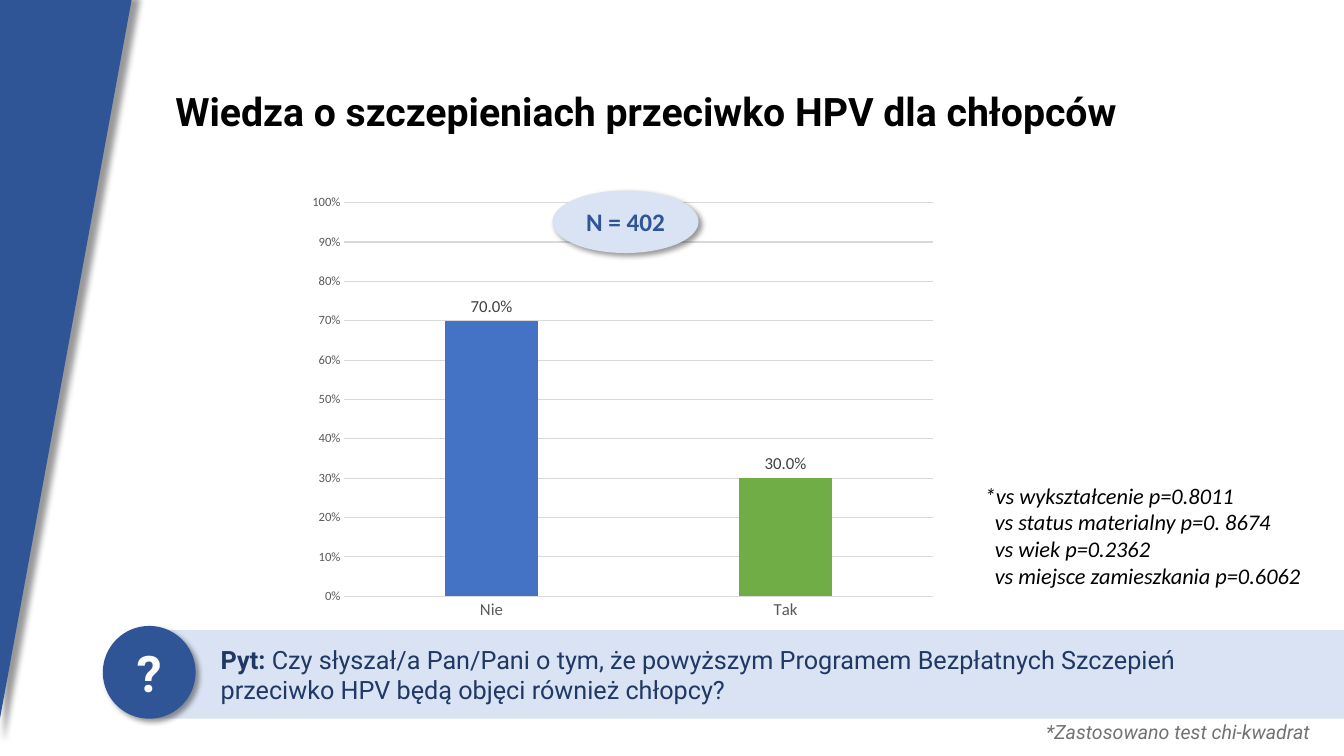
from dataclasses import dataclass

from lxml import etree
from pptx import Presentation, util as u
from pptx.chart import data as chart_data
from pptx.dml.color import RGBColor
from pptx.enum import chart as charts, shapes, text
from pptx.oxml import ns

# Grid of 160 columns by 90 rows of square cells
COLUMNS, ROWS = 160, 90
SLIDE_WIDTH, SLIDE_HEIGHT = u.Inches(13.333), u.Inches(7.5)
CELL = SLIDE_HEIGHT / ROWS

BLACK = RGBColor(0x00, 0x00, 0x00)
WHITE = RGBColor(0xFF, 0xFF, 0xFF)
NAVY = RGBColor(0x20, 0x38, 0x64)
DEEP_BLUE = RGBColor(0x2F, 0x55, 0x97)
BAR_BLUE = RGBColor(0x44, 0x72, 0xC4)
BAR_GREEN = RGBColor(0x70, 0xAD, 0x47)
PALE_BLUE = RGBColor(0xDA, 0xE3, 0xF3)
GRID_GREY = RGBColor(0xD9, 0xD9, 0xD9)
AXIS_GREY = RGBColor(0x59, 0x59, 0x59)
LABEL_GREY = RGBColor(0x40, 0x40, 0x40)
NOTE_GREY = RGBColor(0x76, 0x71, 0x71)


@dataclass
class Box:
    left: float
    top: float
    width: float
    height: float

    def inner(self, left, top, width, height):
        return Box(self.left + left, self.top + top, width, height)

    def emu(self):
        return [round(n * CELL) for n in (self.left, self.top, self.width, self.height)]


# Shared helpers
def set_font(font, size, color, name="Calibri", bold=False, italic=False):
    font.size, font.name = u.Pt(size), name
    font.bold, font.italic = bold, italic
    font.color.rgb = color


def add_run(paragraph, words, *style, **options):
    run = paragraph.add_run()
    run.text = words
    set_font(run.font, *style, **options)


def paint(shape, color, shadow_distance=None):
    shape.fill.solid()
    shape.fill.fore_color.rgb = color
    shape.line.fill.background()
    shape.shadow.inherit = False
    if shadow_distance:
        effects = shape.fill._xPr.find(ns.qn("a:effectLst"))
        shadow = etree.SubElement(
            effects, ns.qn("a:outerShdw"), blurRad=str(u.Pt(4)),
            dist=str(u.Pt(shadow_distance)), dir=str(45 * 60000),
            algn="tl", rotWithShape="0")
        black = etree.SubElement(shadow, ns.qn("a:srgbClr"), val=str(BLACK))
        etree.SubElement(black, ns.qn("a:alpha"), val="40000")


def add_panel(slide, kind, box, color, shadow_distance=None):
    panel = slide.shapes.add_shape(kind, *box.emu())
    paint(panel, color, shadow_distance)
    panel.text_frame.word_wrap = True
    panel.text_frame.vertical_anchor = text.MSO_ANCHOR.MIDDLE
    return panel


def add_oval(slide, box, words, *style):
    oval = add_panel(slide, shapes.MSO_SHAPE.OVAL, box, PALE_BLUE, 3)
    caption = oval.text_frame.paragraphs[0]
    caption.alignment = text.PP_ALIGN.CENTER
    add_run(caption, words, *style, bold=True)
    return oval


def add_textbox(slide, box, wrap=True, grow=True):
    frame = slide.shapes.add_textbox(*box.emu()).text_frame
    frame.word_wrap = wrap
    if grow:
        frame.auto_size = text.MSO_AUTO_SIZE.SHAPE_TO_FIT_TEXT
    return frame


# Regions of the slide
def draw_sidebar(slide, box):
    left, top, width, height = box.emu()
    outline = slide.shapes.build_freeform(left + width, top)
    outline.add_line_segments([(left, top), (left, top + height)], close=True)
    paint(outline.convert_to_shape(), DEEP_BLUE, 6)


def draw_title(slide, box):
    frame = add_textbox(slide, box, grow=False)
    frame.vertical_anchor = text.MSO_ANCHOR.MIDDLE
    heading = frame.paragraphs[0]
    heading.line_spacing = 0.9
    add_run(heading, "Wiedza o szczepieniach przeciwko HPV dla chłopców",
            28, BLACK, "Roboto", bold=True)


def draw_answers(slide, box):
    answers = chart_data.CategoryChartData()
    answers.categories = ["Nie", "Tak"]
    answers.add_series("Series 1", [0.7, 0.3])
    chart = slide.shapes.add_chart(
        charts.XL_CHART_TYPE.COLUMN_CLUSTERED, *box.emu(), answers).chart
    chart.has_legend = chart.has_title = False
    set_font(chart.font, 10, BLACK)

    # Axes
    for axis, size in ((chart.category_axis, 12), (chart.value_axis, 9)):
        axis.major_tick_mark = axis.minor_tick_mark = charts.XL_TICK_MARK.NONE
        set_font(axis.tick_labels.font, size, AXIS_GREY)
    percent = chart.value_axis
    percent.minimum_scale, percent.maximum_scale, percent.major_unit = 0, 1, 0.1
    percent.tick_labels.number_format = "0%"
    percent.tick_labels.number_format_is_linked = False
    percent.format.line.fill.background()
    percent.has_major_gridlines = True
    for rule in (percent.major_gridlines, chart.category_axis):
        rule.format.line.color.rgb = GRID_GREY
        rule.format.line.width = u.Pt(0.75)

    # Columns and their labels
    columns = chart.plots[0]
    columns.gap_width, columns.overlap = 219, -27
    columns.vary_by_categories = False
    share = columns.series[0]
    share.invert_if_negative = False
    for bar, color in ((share, BAR_BLUE), (share.points[1], BAR_GREEN)):
        bar.format.fill.solid()
        bar.format.fill.fore_color.rgb = color
    labels = share.data_labels
    labels.show_value = True
    labels.position = charts.XL_LABEL_POSITION.OUTSIDE_END
    labels.number_format, labels.number_format_is_linked = "0.0%", False
    set_font(labels.font, 12, LABEL_GREY)


def draw_sample_size(slide, box):
    add_oval(slide, box, "N = 402", 18, DEEP_BLUE)


def draw_question(slide, box):
    circle = box.height
    band = box.inner(circle / 2, 0.48, box.width - circle / 2, circle - 0.48)
    bar = add_panel(slide, shapes.MSO_SHAPE.RECTANGLE, band, PALE_BLUE)
    bar.text_frame.margin_left = round(8.52 * CELL)
    question = bar.text_frame.paragraphs[0]
    question.alignment = text.PP_ALIGN.LEFT
    add_run(question, "Pyt: ", 18, NAVY, "Roboto", bold=True)
    add_run(question, "Czy słyszał/a Pan/Pani o tym, że powyższym Programem "
            "Bezpłatnych Szczepień", 18, NAVY, "Roboto")
    question.add_line_break()
    add_run(question, "przeciwko HPV będą objęci również chłopcy?",
            18, NAVY, "Roboto")
    mark = add_oval(slide, box.inner(0, 0, circle, circle), "?", 36, WHITE, "Roboto")
    mark.fill.fore_color.rgb = DEEP_BLUE


def draw_footnote(slide, box):
    frame = add_textbox(slide, box, wrap=False)
    add_run(frame.paragraphs[0], "*Zastosowano test chi-kwadrat",
            14, NOTE_GREY, "Roboto", italic=True)


def draw_p_values(slide, box):
    frame = add_textbox(slide, box)
    comparisons = ["*vs wykształcenie p=0.8011", "vs status materialny p=0. 8674",
                   "vs wiek p=0.2362", "vs miejsce zamieszkania p=0.6062"]
    for row, words in enumerate(comparisons):
        line = frame.add_paragraph() if row else frame.paragraphs[0]
        if row:
            line._p.get_or_add_pPr().set("marL", str(round(1.2 * CELL)))
        add_run(line, words, 16, BLACK, italic=True)


def main():
    deck = Presentation()
    deck.slide_width, deck.slide_height = SLIDE_WIDTH, SLIDE_HEIGHT
    slide = deck.slides.add_slide(deck.slide_layouts[6])
    chart_area = Box(35.64, 22.2, 76.92, 52.68)
    draw_answers(slide, chart_area)
    draw_sidebar(slide, Box(-0.36, -0.96, 16.2, 88.44))
    draw_question(slide, Box(12.24, 74.52, COLUMNS - 12.24, 11.04))
    draw_footnote(slide, Box(123.36, 85.08, 35.04, 4.08))
    draw_sample_size(slide, chart_area.inner(30.12, 0.48, 17.4, 7.44))
    draw_title(slide, Box(19.68, 4.8, 124.68, 17.4))
    draw_p_values(slide, Box(116.04, 56.76, 41.76, 17.76))
    deck.save("out.pptx")


if __name__ == "__main__":
    main()
